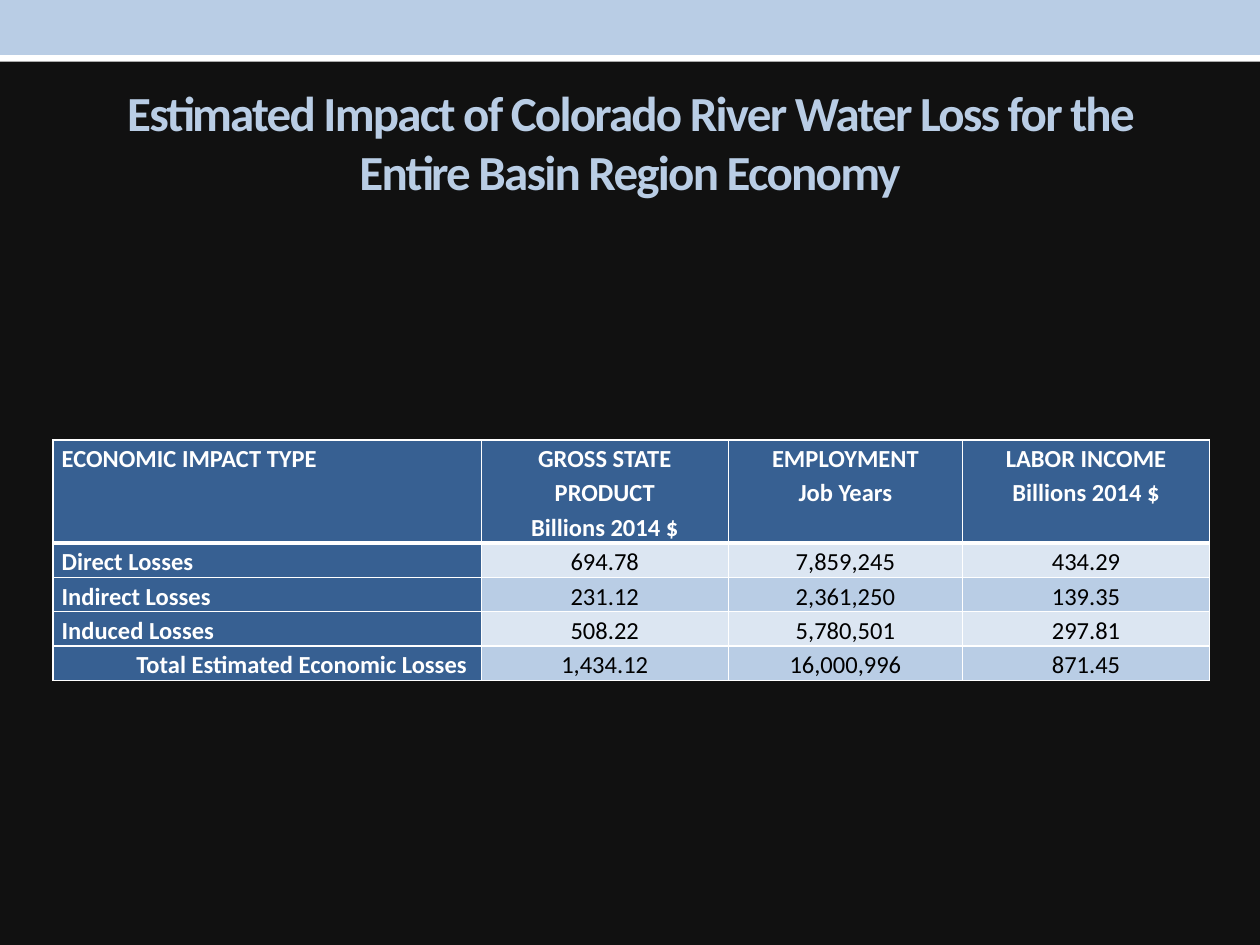
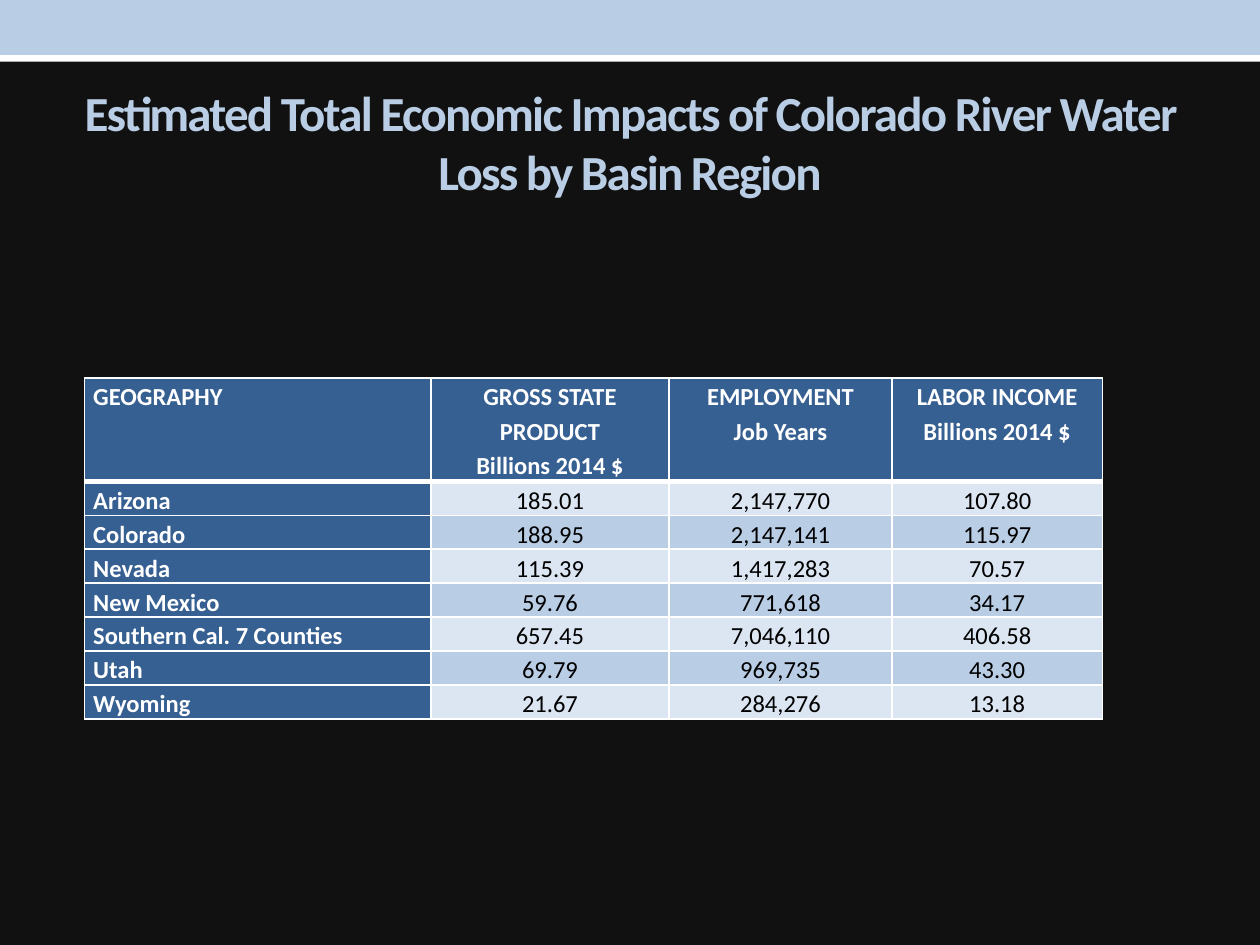
from lxml.etree import SubElement
from pptx import Presentation
from pptx.dml.color import RGBColor
from pptx.enum.shapes import MSO_SHAPE
from pptx.enum.text import MSO_ANCHOR, PP_ALIGN
from pptx.oxml.ns import qn
from pptx.util import Inches, Pt

FONT = "Calibri"
BACKGROUND = "111111"
WHITE = "FFFFFF"
BLACK = "000000"
PALE_BLUE = "B9CDE5"
LIGHT_BLUE = "DCE6F2"
HEADER_BLUE = "376092"

HEADER_HEIGHT = 0.82
ROW_HEIGHT = 0.27
MEASURES = [
    ("GROSS STATE PRODUCT", "Billions 2014 $"),
    ("EMPLOYMENT", "Job Years"),
    ("LABOR INCOME", "Billions 2014 $"),
]
TOTAL_LABEL = "Total Estimated Economic Losses "

SLIDES = [
    {
        "title": "Estimated Impact of Colorado River Water Loss for the "
                 "Entire Basin Region Economy",
        "left_top": (0.42, 3.49),
        "columns": (3.4, 1.96, 1.86, 1.96),
        "label_header": "ECONOMIC IMPACT TYPE",
        "rows": [
            ("Direct Losses", "694.78", "7,859,245", "434.29"),
            ("Indirect Losses", "231.12", "2,361,250", "139.35"),
            ("Induced Losses", "508.22", "5,780,501", "297.81"),
            (TOTAL_LABEL, "1,434.12", "16,000,996", "871.45"),
        ],
    },
    {
        "title": "Estimated Total Economic Impacts of Colorado River Water "
                 "Loss by Basin Region",
        "left_top": (0.67, 3),
        "columns": (2.75, 1.89, 1.77, 1.67),
        "label_header": "GEOGRAPHY",
        "rows": [
            ("Arizona", "185.01", "2,147,770", "107.80"),
            ("Colorado", "188.95", "2,147,141", "115.97"),
            ("Nevada", "115.39", "1,417,283", "70.57"),
            ("New Mexico", "59.76", "771,618", "34.17"),
            ("Southern Cal. 7 Counties", "657.45", "7,046,110", "406.58"),
            ("Utah", "69.79", "969,735", "43.30"),
            ("Wyoming", "21.67", "284,276", "13.18"),
        ],
    },
]


def color(hex_string):
    return RGBColor.from_string(hex_string)


def add_run(paragraph, text, size, hex_string, bold=True):
    run = paragraph.add_run()
    run.text = text
    run.font.name = FONT
    run.font.size = Pt(size)
    run.font.bold = bold
    run.font.color.rgb = color(hex_string)
    return run


def add_band(slide, top, height, hex_string, line_width=None):
    band = slide.shapes.add_shape(
        MSO_SHAPE.RECTANGLE, 0, Inches(top), Inches(10), Inches(height))
    band.shadow.inherit = False
    band.fill.solid()
    band.fill.fore_color.rgb = color(hex_string)
    if line_width:
        band.line.color.rgb = color(hex_string)
        band.line.width = Pt(line_width)
    else:
        band.line.fill.background()


def add_title(slide, text):
    box = slide.shapes.add_textbox(
        Inches(0.5), Inches(0.58), Inches(9), Inches(1.08))
    frame = box.text_frame
    frame.word_wrap = True
    frame.vertical_anchor = MSO_ANCHOR.MIDDLE
    paragraph = frame.paragraphs[0]
    paragraph.alignment = PP_ALIGN.CENTER
    run = add_run(paragraph, text, 28, PALE_BLUE)
    run.font._element.set("spc", "-100")


def set_borders(cell, top, bottom):
    """Draw white cell edges; top and bottom are widths in points."""
    properties = cell._tc.get_or_add_tcPr()
    for side, width in (("L", 1), ("R", 1), ("T", top), ("B", bottom)):
        line = SubElement(properties, qn(f"a:ln{side}"), w=str(Pt(width)))
        fill = SubElement(line, qn("a:solidFill"))
        SubElement(fill, qn("a:srgbClr"), val=WHITE)


def fill_cell(cell, lines, row, column):
    is_header, is_label = row == 0, column == 0
    set_borders(cell, top=3 if row == 1 else 1, bottom=3 if is_header else 1)
    if is_header or is_label:
        background, text_color = HEADER_BLUE, WHITE
    else:
        background = LIGHT_BLUE if row % 2 else PALE_BLUE
        text_color = BLACK
    cell.fill.solid()
    cell.fill.fore_color.rgb = color(background)
    cell.margin_left = cell.margin_right = Inches(0.07)
    cell.margin_top = cell.margin_bottom = 0
    cell.vertical_anchor = MSO_ANCHOR.TOP if is_header else MSO_ANCHOR.MIDDLE

    if lines[0] == TOTAL_LABEL:
        alignment = PP_ALIGN.RIGHT
    else:
        alignment = PP_ALIGN.LEFT if is_label else PP_ALIGN.CENTER
    frame = cell.text_frame
    for index, text in enumerate(lines):
        paragraph = frame.add_paragraph() if index else frame.paragraphs[0]
        paragraph.alignment = alignment
        paragraph.line_spacing = 1.15
        add_run(paragraph, text, 14, text_color, bold=is_header or is_label)


def add_impact_table(slide, content):
    header = [(content["label_header"],), *MEASURES]
    body = [[(value,) for value in values] for values in content["rows"]]
    rows = [header, *body]
    heights = [HEADER_HEIGHT] + [ROW_HEIGHT] * len(body)
    widths = content["columns"]
    left, top = content["left_top"]
    table = slide.shapes.add_table(
        len(rows), len(widths), Inches(left), Inches(top),
        Inches(sum(widths)), Inches(sum(heights))).table
    for column, width in zip(table.columns, widths):
        column.width = Inches(width)
    for row_index, (cells, height) in enumerate(zip(rows, heights)):
        table.rows[row_index].height = Inches(height)
        for column_index, lines in enumerate(cells):
            fill_cell(table.cell(row_index, column_index), lines,
                      row_index, column_index)


def add_slide(presentation, content):
    slide = presentation.slides.add_slide(presentation.slide_layouts[6])
    slide.background.fill.solid()
    slide.background.fill.fore_color.rgb = color(BACKGROUND)
    add_band(slide, 0.24, 0.25, WHITE)
    add_impact_table(slide, content)
    add_band(slide, 0, 0.42, PALE_BLUE, line_width=2.08)
    add_title(slide, content["title"])


def main():
    presentation = Presentation()
    presentation.slide_width = Inches(10)
    presentation.slide_height = Inches(7.5)
    for content in SLIDES:
        add_slide(presentation, content)
    presentation.save("out.pptx")


if __name__ == "__main__":
    main()
